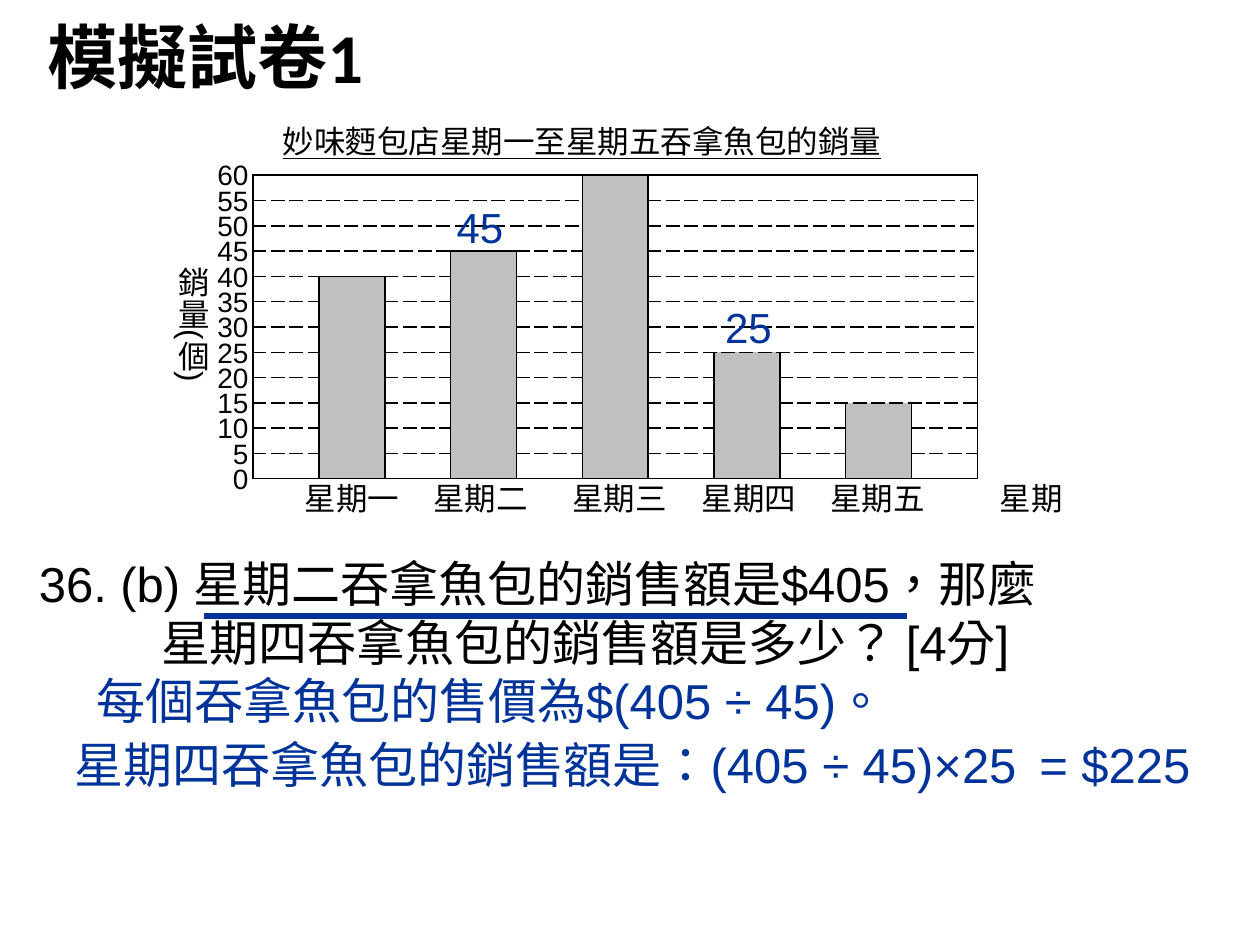
from lxml.etree import SubElement
from pptx import Presentation
from pptx.dml.color import RGBColor
from pptx.enum.shapes import MSO_CONNECTOR
from pptx.enum.text import MSO_ANCHOR, MSO_AUTO_SIZE, PP_ALIGN
from pptx.oxml.ns import qn
from pptx.util import Inches, Pt

BLACK, BLUE, GREY = "000000", "003399", "C0C0C0"
CJK = "Noto Sans CJK SC"
# weekday: sales, left of its label within the chart
SALES = {"星期一": (40, 0.31), "星期二": (45, 1.33), "星期三": (60, 2.43),
         "星期四": (25, 3.46), "星期五": (15, 4.48)}
TOP, STEP = 60, 5


def color(hex_value):
    return RGBColor.from_string(hex_value)


def apply_format(target, values):
    for name, value in values.items():
        setattr(target, name, value)


def write(paragraph, runs, size, ink=BLACK, align=PP_ALIGN.LEFT, **font):
    """Fill a paragraph with (text, font name) runs."""
    paragraph.alignment = align
    for text, typeface in runs:
        run = paragraph.add_run()
        run.text = text
        run._r.get_or_add_rPr().set("lang", "zh-TW")
        apply_format(run.font, {"name": typeface, "size": Pt(size), **font})
        run.font.color.rgb = color(ink)


def add_text(slide, box, lines, size, wrap=True, anchor=MSO_ANCHOR.TOP, **style):
    """Place a text box; each line is a string in Arial or a list of runs."""
    frame = slide.shapes.add_textbox(*map(Inches, box)).text_frame
    apply_format(frame, {"word_wrap": wrap, "vertical_anchor": anchor,
                         "auto_size": MSO_AUTO_SIZE.SHAPE_TO_FIT_TEXT})
    for index, line in enumerate(lines):
        paragraph = frame.add_paragraph() if index else frame.paragraphs[0]
        runs = [(line, "Arial")] if isinstance(line, str) else line
        write(paragraph, runs, size, **style)
    return frame


def add_heading(slide, box):
    title = slide.shapes.title
    apply_format(title, dict(zip(("left", "top", "width", "height"), map(Inches, box))))
    apply_format(title.text_frame, {"word_wrap": False,
                                    "vertical_anchor": MSO_ANCHOR.MIDDLE})
    write(title.text_frame.paragraphs[0], [("模擬試卷1", "Calibri")], 40, bold=True)


def set_borders(cell, dashes):
    """dashes maps L, R, T, B to a dash style; absent sides get no line."""
    properties = cell._tc.get_or_add_tcPr()
    for side in "LRTB":
        line = SubElement(properties, qn(f"a:ln{side}"), w=str(Pt(1)))
        if side not in dashes:
            SubElement(line, qn("a:noFill"))
            continue
        fill = SubElement(line, qn("a:solidFill"))
        SubElement(fill, qn("a:srgbClr"), val=BLACK)
        SubElement(line, qn("a:prstDash"), val=dashes[side])


def add_bar_grid(slide, box):
    """Draw the bars as merged cells of a ruled table."""
    rows, columns = TOP // STEP, 2 * len(SALES) + 1
    grid = slide.shapes.add_table(rows, columns, *map(Inches, box)).table
    apply_format(grid, {"first_row": False, "horz_banding": False})
    bar_starts = {2 * i + 1: rows - value // STEP
                  for i, (value, _) in enumerate(SALES.values())}

    def in_bar(row, column):
        return row >= bar_starts.get(column, rows)

    def bar_top(column):
        return "solid" if bar_starts[column] < rows / 2 else "sysDash"

    def cell_dashes(row, column):
        bar = in_bar(row, column)
        dashes = {"T": "sysDash", "B": "sysDash"}
        if bar or column == 0 or in_bar(row, column - 1):
            dashes["L"] = "solid"
        if bar or column == columns - 1 or in_bar(row, column + 1):
            dashes["R"] = "solid"
        if bar:
            dashes.update(T=bar_top(column), B="solid")
        elif in_bar(row + 1, column) and row + 1 < rows:
            dashes["B"] = bar_top(column)
        if row == 0:
            dashes["T"] = "solid"
        if row == rows - 1:
            dashes["B"] = "solid"
        return dashes

    for row in range(rows):
        for column in range(columns):
            cell = grid.cell(row, column)
            apply_format(cell, dict.fromkeys(("margin_top", "margin_bottom"), 0))
            cell.text_frame.paragraphs[0]._p.get_or_add_endParaRPr().set("sz", "800")
            set_borders(cell, cell_dashes(row, column))
            if in_bar(row, column):
                cell.fill.solid()
                cell.fill.fore_color.rgb = color(GREY)
            else:
                cell.fill.background()
    for column, start in bar_starts.items():
        grid.cell(start, column).merge(grid.cell(rows - 1, column))


def add_sales_chart(slide, box):
    left, top, width, height = box
    center = PP_ALIGN.CENTER
    # Chart title
    add_text(slide, (left + 0.11, top - 0.47, 5, 0.4),
             ["妙味麪包店星期一至星期五吞拿魚包的銷量"], 18, wrap=False,
             align=center, underline=True)
    add_bar_grid(slide, box)
    # Weekday labels and axis name
    labels = [(day, offset, 0.95) for day, (_, offset) in SALES.items()]
    for label, offset, label_width in labels + [("星期", 5.82, 0.71)]:
        add_text(slide, (left + offset, top + 2.36, label_width, 0.4), [label], 18,
                 wrap=False, align=center)
    # Value scale, one line per table row
    scale = add_text(slide, (left - 0.39, top - 0.12, 0.45, 2.72),
                     [str(value) for value in range(TOP, -1, -STEP)], 16,
                     wrap=False, align=PP_ALIGN.RIGHT)
    for paragraph in scale.paragraphs:
        paragraph.line_spacing = Pt(height / (TOP // STEP) * 72)
    # Vertical axis name
    axis_name = add_text(slide, (left - 0.79, top + 0.63, 0.51, 1.18),
                         ["銷量(個)"], 18, align=center)
    axis_name._txBody.bodyPr.set("vert", "eaVert")
    # Values read off the bars
    for value, x, y in (("45", 1.13, 0.16), ("25", 3.26, 0.95)):
        add_text(slide, (left + x, top + y, 1.34, 0.51), [value], 24,
                 ink=BLUE, align=center)


def add_question(slide, box):
    left, top = box[:2]
    question = add_text(slide, box,
                        ["36. (b) 星期二吞拿魚包的銷售額是$405，那麼",
                         "星期四吞拿魚包的銷售額是多少？ [4分]"],
                        28, anchor=MSO_ANCHOR.MIDDLE)
    indent = question.paragraphs[1]._p.get_or_add_pPr()
    indent.set("marL", str(Inches(0.97)))
    indent.set("indent", "0")
    # Line under the given fact
    x, y = left + 1.41, top + 0.55
    underline = slide.shapes.add_connector(
        MSO_CONNECTOR.STRAIGHT, *map(Inches, (x, y, x + 5.58, y)))
    underline.line.color.rgb = color(BLUE)
    underline.line.width = Pt(3)
    SubElement(underline._element.spPr, qn("a:effectLst"))


def add_solution(slide, box):
    left, top, width, height = box
    add_text(slide, (left + 0.57, top, 6.69, height),
             [[("每個吞拿魚包的售價為", CJK), ("$(405 ÷ 45)", "Arial"), ("。", CJK)]],
             28, ink=BLUE)
    add_text(slide, (left, top + 0.51, 8.46, height),
             [[("星期四吞拿魚包的銷售額是", CJK), ("：(405 ÷ 45)×25", "Arial")]],
             28, ink=BLUE, align=PP_ALIGN.CENTER)
    add_text(slide, (left + 8.05, top + 0.51, 1.51, height), ["= $225"], 28, ink=BLUE)


def main():
    deck = Presentation()
    apply_format(deck, {"slide_width": Inches(10), "slide_height": Inches(7.5)})
    slide = deck.slides.add_slide(deck.slide_layouts[5])
    add_heading(slide, (0.28, 0.03, 3.08, 0.82))
    add_sales_chart(slide, (2.01, 1.39, 5.75, 2.41))
    add_question(slide, (0.21, 4.34, 8.45, 1.04))
    add_solution(slide, (0.1, 5.27, 9.56, 0.57))
    deck.save("out.pptx")


if __name__ == "__main__":
    main()
